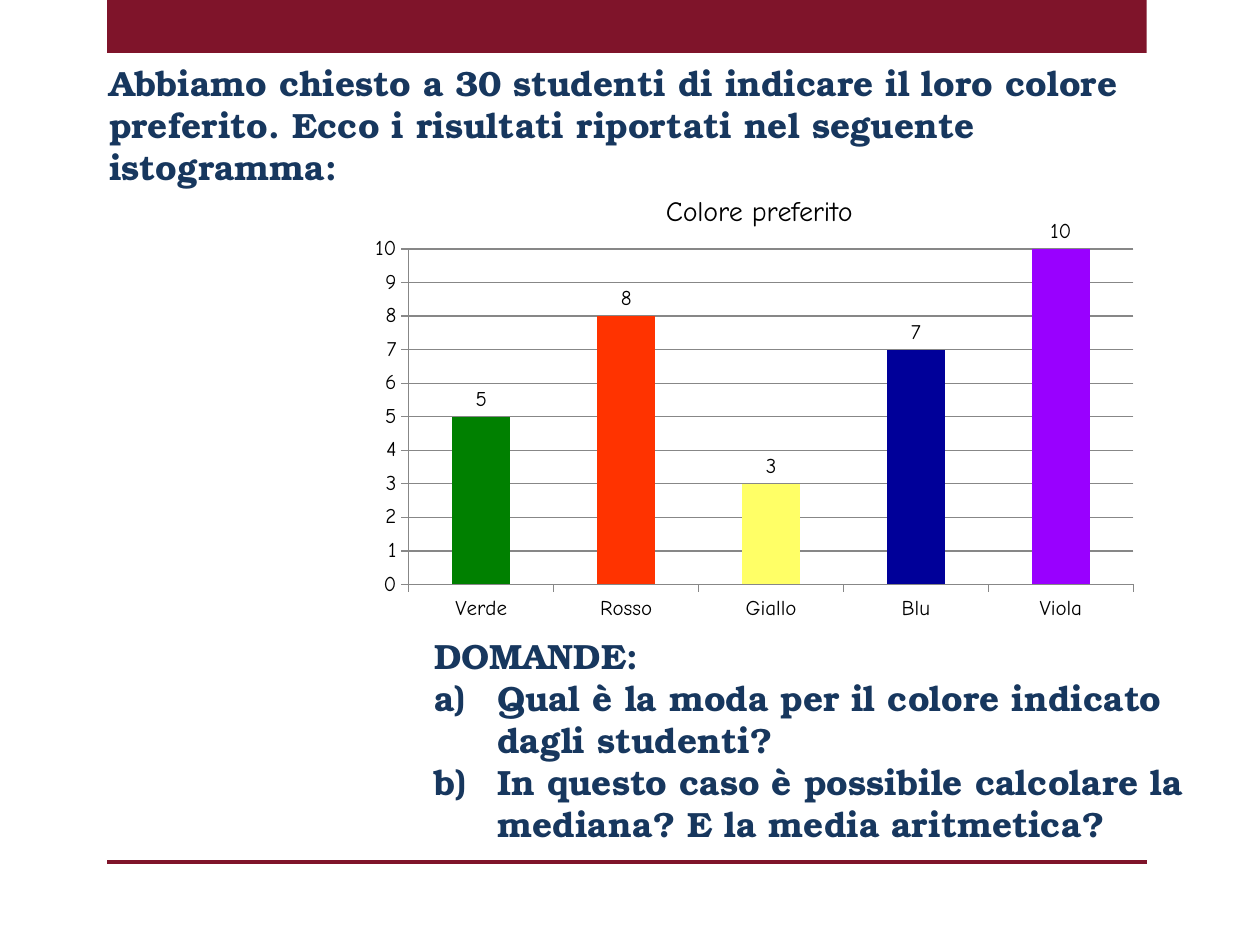
import dataclasses

import lxml.etree
import pptx
import pptx.chart.data
import pptx.dml.color
import pptx.enum.chart
import pptx.enum.shapes
import pptx.oxml
import pptx.oxml.ns
import pptx.util

COLUMNS, ROWS = 100, 100
SLIDE_WIDTH, SLIDE_HEIGHT = pptx.util.Inches(10), pptx.util.Inches(7.5)


@dataclasses.dataclass(frozen=True)
class Theme:
    band: str = "7F142A"
    text: str = "17375E"
    label: str = "000000"
    grid: str = "878787"
    text_font: str = "TeX Gyre Bonum"
    chart_font: str = "Comic Neue"
    text_size: int = 20
    title_size: int = 16
    label_size: int = 12


THEME = Theme()
VOTES = {
    "Verde": (5, "008000"),
    "Rosso": (8, "FF3300"),
    "Giallo": (3, "FFFF66"),
    "Blu": (7, "000099"),
    "Viola": (10, "9900FF"),
}
QUESTIONS = [
    "Qual è la moda per il colore indicato dagli studenti?",
    "In questo caso è possibile calcolare la mediana? E la media aritmetica?",
]


def across(columns):
    return round(SLIDE_WIDTH * columns / COLUMNS)


def down(rows):
    return round(SLIDE_HEIGHT * rows / ROWS)


def area(left, top, width, height):
    return across(left), down(top), across(width), down(height)


def color(value):
    return pptx.dml.color.RGBColor.from_string(value)


def style_font(font, name, size, value, bold=False):
    font.name = name
    font.size = pptx.util.Pt(size)
    font.color.rgb = color(value)
    font.bold = bold


def style_label(font, size=THEME.label_size):
    style_font(font, THEME.chart_font, size, THEME.label)


def add_band(page, place):
    band = page.shapes.add_shape(pptx.enum.shapes.MSO_SHAPE.RECTANGLE, *place)
    band.shadow.inherit = False
    band.fill.solid()
    band.fill.fore_color.rgb = color(THEME.band)
    band.line.fill.background()


def add_rule(page, left, right, row):
    rule = page.shapes.add_connector(
        pptx.enum.shapes.MSO_CONNECTOR.STRAIGHT,
        across(left), down(row), across(right), down(row))
    rule.line.color.rgb = color(THEME.band)
    rule.line.width = pptx.util.Pt(2)
    lxml.etree.SubElement(rule._element.spPr, pptx.oxml.ns.qn("a:effectLst"))


def number_paragraph(para):
    properties = para._p.get_or_add_pPr()
    indent = pptx.util.Inches(0.5)
    properties.set("marL", str(indent))
    properties.set("indent", str(-indent))
    number = lxml.etree.SubElement(properties, pptx.oxml.ns.qn("a:buAutoNum"))
    number.set("type", "alphaLcParenR")


def add_text(page, place, heading, numbered=()):
    frame = page.shapes.add_textbox(*place).text_frame
    frame.word_wrap = True
    for position, wording in enumerate([heading, *numbered]):
        para = frame.add_paragraph() if position else frame.paragraphs[0]
        if position:
            number_paragraph(para)
        span = para.add_run()
        span.text = wording
        style_font(span.font, THEME.text_font, THEME.text_size, THEME.text, True)


def set_layout(element, index, **values):
    qn = pptx.oxml.ns.qn
    for old in element.findall(qn("c:layout")):
        element.remove(old)
    layout = pptx.oxml.parse_xml(f"<c:layout {pptx.oxml.ns.nsdecls('c')}/>")
    manual = lxml.etree.SubElement(layout, qn("c:manualLayout"))
    for name, value in values.items():
        lxml.etree.SubElement(manual, qn(f"c:{name}")).set("val", str(value))
    element.insert(index, layout)


def style_axis(axis):
    axis.major_tick_mark = pptx.enum.chart.XL_TICK_MARK.OUTSIDE
    axis.minor_tick_mark = pptx.enum.chart.XL_TICK_MARK.NONE
    axis.format.line.color.rgb = color(THEME.grid)
    style_label(axis.tick_labels.font)


def add_title(chart, wording):
    chart.has_title = True
    title = chart.chart_title
    span = title.text_frame.paragraphs[0].add_run()
    span.text = wording
    style_label(span.font, THEME.title_size)
    set_layout(title._element, 1, xMode="edge", yMode="edge", x=0.38, y=0.05)


def add_votes_chart(page, place):
    chart_types = pptx.enum.chart
    data = pptx.chart.data.CategoryChartData()
    data.categories = list(VOTES)
    data.add_series("Series 1", [votes for votes, _ in VOTES.values()])
    chart = page.shapes.add_chart(
        chart_types.XL_CHART_TYPE.COLUMN_CLUSTERED, *place, data).chart
    chart.has_legend = False
    style_label(chart.font)
    add_title(chart, "Colore preferito")

    style_axis(chart.category_axis)
    scale = chart.value_axis
    style_axis(scale)
    scale.minimum_scale, scale.maximum_scale, scale.major_unit = 0, 10, 1
    scale.has_major_gridlines = True
    scale.major_gridlines.format.line.color.rgb = color(THEME.grid)

    plot = chart.plots[0]
    plot.gap_width = 150
    plot.vary_by_categories = False
    series = plot.series[0]
    series.invert_if_negative = False
    for index, (_, fill) in enumerate(VOTES.values()):
        bar = series.points[index].format.fill
        bar.solid()
        bar.fore_color.rgb = color(fill)
    labels = series.data_labels
    labels.show_value = True
    labels.position = chart_types.XL_LABEL_POSITION.OUTSIDE_END
    style_label(labels.font)
    set_layout(chart._chartSpace.chart.plotArea, 0, layoutTarget="inner",
               xMode="edge", yMode="edge", x=0.06, y=0.18, w=0.92, h=0.72)


def main():
    deck = pptx.Presentation()
    deck.slide_width, deck.slide_height = SLIDE_WIDTH, SLIDE_HEIGHT
    page = deck.slides.add_slide(deck.slide_layouts[6])
    add_band(page, area(8.5, 0, 82.5, 5.6))
    add_rule(page, 8.5, 91, 91.2)
    add_text(page, area(7.7, 5.87, 83.6, 14.8),
             "Abbiamo chiesto a 30 studenti di indicare il loro colore preferito. "
             "Ecco i risultati riportati nel seguente istogramma:")
    add_text(page, area(33.5, 66.53, 63, 23.73), "DOMANDE:", QUESTIONS)
    add_votes_chart(page, area(28.7, 17.47, 62.5, 49.33))
    deck.save("out.pptx")


if __name__ == "__main__":
    main()
